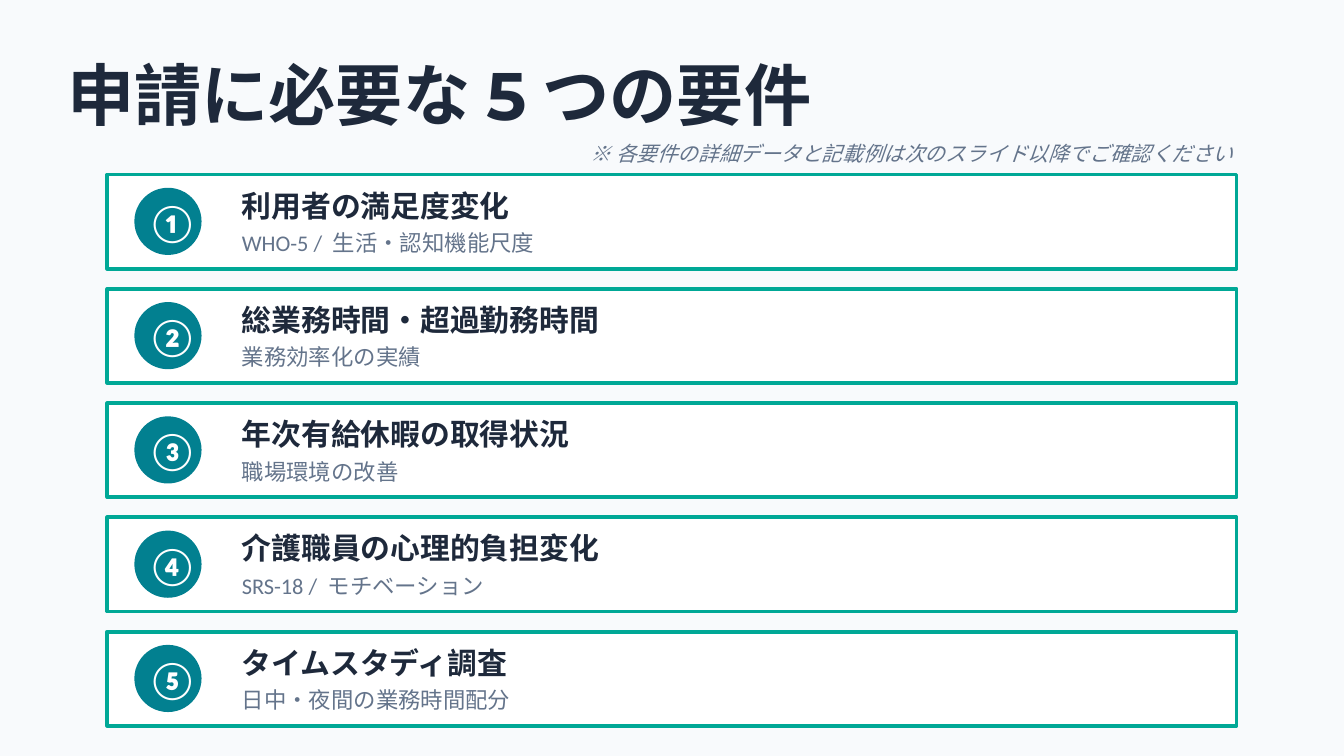
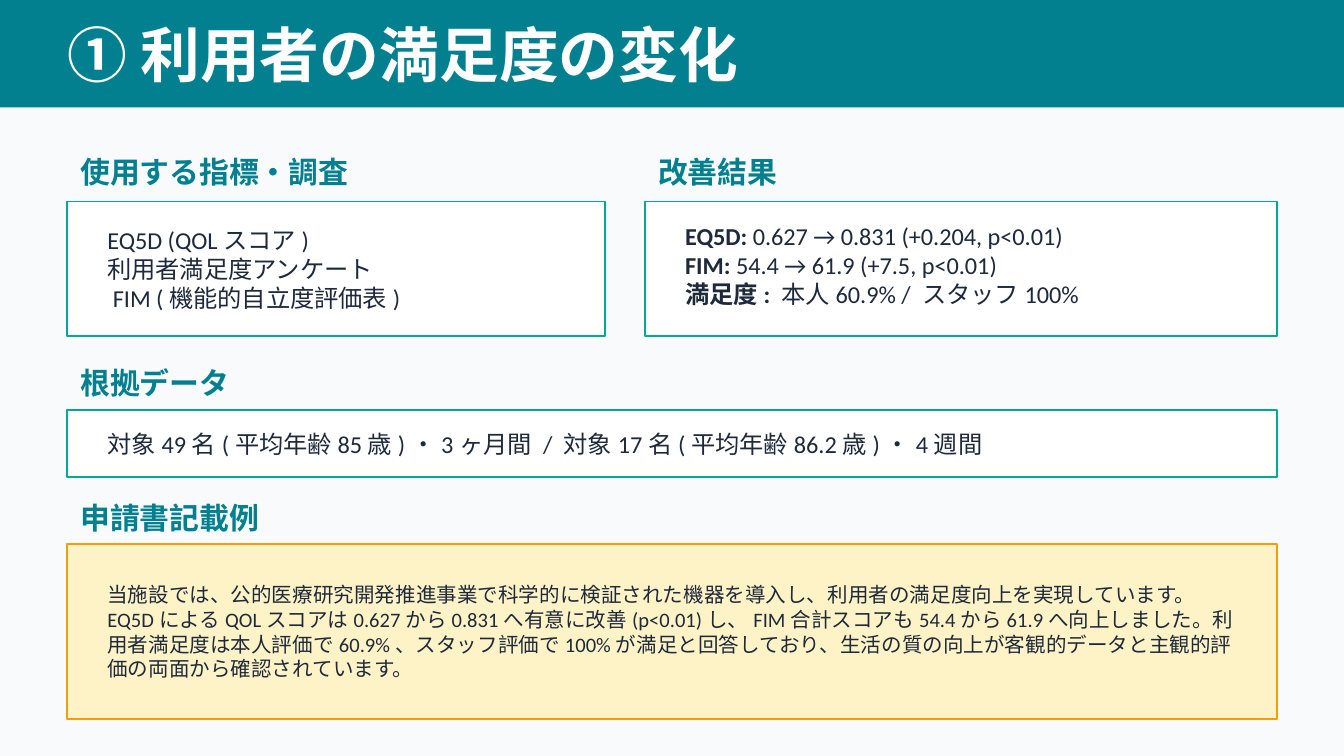
from pptx import Presentation
from pptx.dml.color import RGBColor
from pptx.enum.shapes import MSO_SHAPE
from pptx.enum.text import MSO_ANCHOR, PP_ALIGN
from pptx.util import Cm, Pt

RECT, OVAL = MSO_SHAPE.RECTANGLE, MSO_SHAPE.OVAL
MIDDLE = MSO_ANCHOR.MIDDLE
LEFT, CENTER = PP_ALIGN.LEFT, PP_ALIGN.CENTER

TEAL, MINT, INK, SLATE = "028090", "00A896", "1E293B", "64748B"
WHITE, PAPER, CREAM, AMBER = "FFFFFF", "F8FAFC", "FEF3C7", "F59E0B"
TITLE_FONT, BODY_FONT = "Montserrat", "Calibri"
SLIDE_W, SLIDE_H = 25.4, 14.29
MARGIN, CONTENT_W = 1.27, 22.86

REQUIREMENTS = [
    ("①", "利用者の満足度変化", "WHO-5 / 生活・認知機能尺度"),
    ("②", "総業務時間・超過勤務時間", "業務効率化の実績"),
    ("③", "年次有給休暇の取得状況", "職場環境の改善"),
    ("④", "介護職員の心理的負担変化", "SRS-18 / モチベーション"),
    ("⑤", "タイムスタディ調査", "日中・夜間の業務時間配分"),
]
INDICATORS = ["EQ5D (QOLスコア)", "利用者満足度アンケート", " FIM (機能的自立度評価表)"]
RESULTS = [
    ("EQ5D: ", "0.627 → 0.831 (+0.204, p<0.01)"),
    ("FIM: ", "54.4 → 61.9 (+7.5, p<0.01)"),
    ("満足度: ", "本人60.9% / スタッフ100%"),
]
EVIDENCE = ["対象49名(平均年齢85歳)・3ヶ月間 / 対象17名(平均年齢86.2歳)・4週間"]
EXAMPLE = [
    "当施設では、公的医療研究開発推進事業で科学的に検証された機器を導入し、"
    "利用者の満足度向上を実現しています。EQ5DによるQOLスコアは0.627から0.831へ"
    "有意に改善(p<0.01)し、FIM合計スコアも54.4から61.9へ向上しました。"
    "利用者満足度は本人評価で60.9%、スタッフ評価で100%が満足と回答しており、"
    "生活の質の向上が客観的データと主観的評価の両面から確認されています。"
]


def rgb(value):
    return RGBColor.from_string(value)


def add_block(slide, kind, box, fill, line=None, weight=1):
    block = slide.shapes.add_shape(kind, *map(Cm, box))
    block.shadow.inherit = False
    block.fill.solid()
    block.fill.fore_color.rgb = rgb(fill)
    if line:
        block.line.color.rgb = rgb(line)
        block.line.width = Pt(weight)
    else:
        block.line.fill.background()


def add_text(slide, box, lines, size, color, bold=None, italic=None,
             align=LEFT, font=BODY_FONT, inset=(0.25, 0.13)):
    frame = slide.shapes.add_textbox(*map(Cm, box)).text_frame
    frame.word_wrap = True
    frame.vertical_anchor = MIDDLE
    frame.margin_left = frame.margin_right = Cm(inset[0])
    frame.margin_top = frame.margin_bottom = Cm(inset[1])
    for index, line in enumerate(lines):
        paragraph = frame.paragraphs[0] if index == 0 else frame.add_paragraph()
        paragraph.alignment = align
        paragraph.font.name = font
        paragraph.font.size = Pt(size)
        paragraph.font.color.rgb = rgb(color)
        paragraph.font.bold = bold
        paragraph.font.italic = italic
        if isinstance(line, str):
            paragraph.add_run().text = line
        else:
            label, value = line
            label_run = paragraph.add_run()
            label_run.text = label
            label_run.font.bold = True
            paragraph.add_run().text = value


def add_title(slide, box, title, size, color):
    add_text(slide, box, [title], size, color, bold=True, font=TITLE_FONT, inset=(0, 0))


def add_slide(deck):
    slide = deck.slides.add_slide(deck.slide_layouts[6])
    slide.background.fill.solid()
    slide.background.fill.fore_color.rgb = rgb(PAPER)
    return slide


def add_requirement(slide, box, number, name, detail):
    left, top, _, height = box
    badge = (left + 0.51, top + 0.25, height - 0.51, height - 0.51)
    text_left, text_w = left + 2.29, 11.43
    add_block(slide, RECT, box, WHITE, MINT, 2)
    add_block(slide, OVAL, badge, TEAL)
    add_text(slide, badge, [number], 20, WHITE, bold=True, align=CENTER)
    add_text(slide, (text_left, top + 0.2, text_w, 0.76), [name], 16, INK, bold=True)
    add_text(slide, (text_left, top + 0.97, text_w, 0.64), [detail], 12, SLATE)


def add_panel(slide, box, heading, lines, heading_h=0.76, size=13,
              fill=WHITE, line=MINT, rise=0):
    left, top, width, height = box
    pad_x, pad_y = 0.51, 0.25
    add_text(slide, (left, top - heading_h - 0.13, width, heading_h),
             [heading], 16, TEAL, bold=True)
    add_block(slide, RECT, box, fill, line)
    body = (left + pad_x, top + pad_y - rise, width - 2 * pad_x, height - 2 * pad_y)
    add_text(slide, body, lines, size, INK)


def build_overview(deck):
    slide = add_slide(deck)
    add_title(slide, (MARGIN, 1.02, CONTENT_W, 1.52), "申請に必要な5つの要件", 36, INK)
    first_top, row_h, gap = 3.3, 1.78, 0.38
    for index, requirement in enumerate(REQUIREMENTS):
        top = first_top + index * (row_h + gap)
        add_requirement(slide, (2.03, top, 21.34, row_h), *requirement)
    add_text(slide, (5.82, 2.51, CONTENT_W, 0.76),
             ["※ 各要件の詳細データと記載例は次のスライド以降でご確認ください"],
             11, SLATE, italic=True, align=CENTER)


def build_satisfaction(deck):
    slide = add_slide(deck)
    add_block(slide, RECT, (0, 0, SLIDE_W, 2.03), TEAL)
    add_title(slide, (MARGIN, 0.38, CONTENT_W, 1.27), "① 利用者の満足度の変化", 32, WHITE)
    indicators_w, gutter = 10.16, 0.76
    results_left = MARGIN + indicators_w + gutter
    results_w = CONTENT_W - indicators_w - gutter
    add_panel(slide, (MARGIN, 3.81, indicators_w, 2.54), "使用する指標・調査",
              INDICATORS, heading_h=0.89)
    add_panel(slide, (results_left, 3.81, results_w, 2.54), "改善結果",
              RESULTS, heading_h=0.89, rise=0.08)
    add_panel(slide, (MARGIN, 7.75, CONTENT_W, 1.27), "根拠データ", EVIDENCE)
    add_panel(slide, (MARGIN, 10.29, CONTENT_W, 3.3), "申請書記載例", EXAMPLE,
              size=11, fill=CREAM, line=AMBER)


def main():
    deck = Presentation()
    deck.slide_width, deck.slide_height = Cm(SLIDE_W), Cm(SLIDE_H)
    build_overview(deck)
    build_satisfaction(deck)
    deck.save("out.pptx")


if __name__ == "__main__":
    main()
